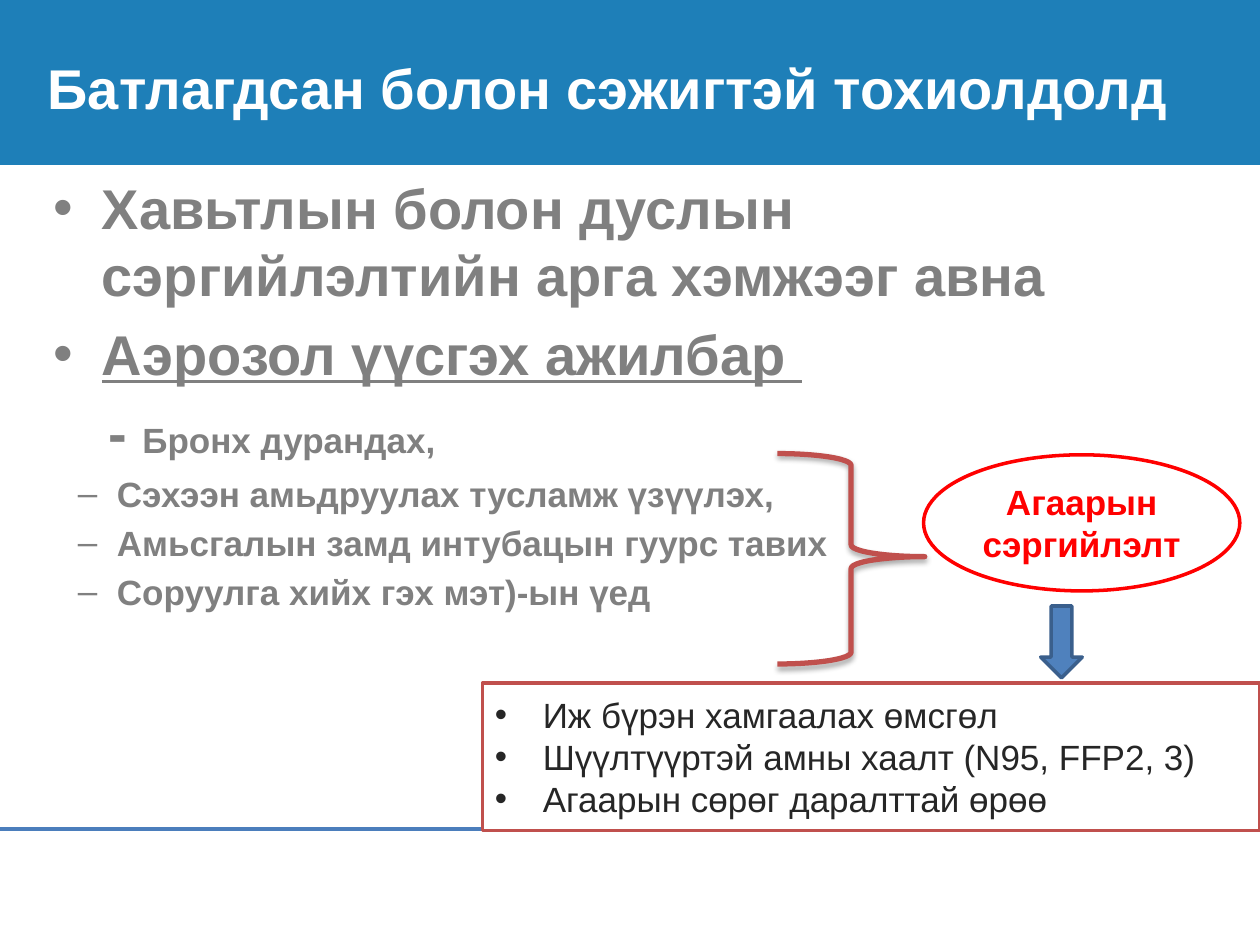
from lxml.etree import SubElement
from pptx import Presentation
from pptx.dml.color import RGBColor
from pptx.enum.shapes import MSO_CONNECTOR as Line, MSO_SHAPE as Shape
from pptx.enum.text import MSO_ANCHOR as Anchor, PP_ALIGN as Align
from pptx.oxml.ns import qn
from pptx.util import Inches, Pt

COLORS = {
    "header": "1E7FB8", "white": "FFFFFF", "body": "808080", "rule": "4B7EBC",
    "brace": "C0504D", "alert": "FF0000", "dark": "262626",
    "arrow": "4F81BD", "arrow_edge": "3A5F8C", "shadow": "000000",
}

TITLE = "Батлагдсан болон сэжигтэй тохиолдолд"
MEASURES = [
    ("Хавьтлын болон дуслын сэргийлэлтийн арга хэмжээг авна", False),
    ("Аэрозол үүсгэх ажилбар ", True),
]
FIRST_PROCEDURE = ("- ", "Бронх дурандах,")
PROCEDURES = [
    "Сэхээн амьдруулах тусламж үзүүлэх,",
    "Амьсгалын замд интубацын гуурс тавих",
    "Соруулга хийх гэх мэт)-ын үед",
]
PRECAUTION = "Агаарын сэргийлэлт"
EQUIPMENT = [
    "Иж бүрэн хамгаалах өмсгөл",
    "Шүүлтүүртэй амны хаалт (N95, FFP2, 3)",
    "Агаарын сөрөг даралттай өрөө",
]

AREAS = {
    "header": (0, 0, 100, 17.47),
    "title": (2.8, 0, 97.2, 18.53),
    "body": (3.3, 17.73, 95, 64.4),
    "brace": (61.7, 48, 11.7, 22.27),
    "precaution": (73.3, 48.13, 25.1, 14.4),
    "equipment": (38.3, 72.27, 61.7, 15.6),
    "arrow": (82.6, 64.13, 3.3, 7.6),
}
RULE_Y = 87.73

prs = Presentation()
prs.slide_width, prs.slide_height = Inches(10), Inches(7.5)
slide = prs.slides.add_slide(prs.slide_layouts[6])


def across(share):
    return round(prs.slide_width * share / 100)


def down(share):
    return round(prs.slide_height * share / 100)


def place(name):
    x, y, w, h = AREAS[name]
    return across(x), down(y), across(w), down(h)


def rgb(name):
    return RGBColor.from_string(COLORS[name])


def add_shape(kind, name, fill=None, line=None, width=2):
    sp = slide.shapes.add_shape(kind, *place(name))
    sp.shadow.inherit = False
    if fill:
        sp.fill.solid()
        sp.fill.fore_color.rgb = rgb(fill)
    else:
        sp.fill.background()
    if line:
        sp.line.color.rgb = rgb(line)
        sp.line.width = Pt(width)
    else:
        sp.line.fill.background()
    return sp


def add_box(name):
    sp = slide.shapes.add_textbox(*place(name))
    sp.text_frame.word_wrap = True
    return sp


def add_text(sp, *runs, size=20, color="body", bold=True, underline=False,
             align=Align.LEFT, bullet=None, left=0, hang=0, before=0):
    tf = sp.text_frame
    p = tf.paragraphs[0] if not tf.text else tf.add_paragraph()
    p.alignment = align
    p.space_before = Pt(before)
    pPr = p._p.get_or_add_pPr()
    pPr.set("marL", str(Inches(left)))
    pPr.set("indent", str(-Inches(hang)))
    if bullet:
        SubElement(pPr, qn("a:buFont"), typeface="Arial")
        SubElement(pPr, qn("a:buChar"), char=bullet)
    for text, run_size in runs:
        r = p.add_run()
        r.text = text
        r.font.name = "Arial"
        r.font.size = Pt(run_size or size)
        r.font.bold = bold
        r.font.underline = underline
        r.font.color.rgb = rgb(color)


add_shape(Shape.RECTANGLE, "header", fill="header")

rule = slide.shapes.add_connector(
    Line.STRAIGHT, 0, down(RULE_Y), across(100), down(RULE_Y))
rule.line.color.rgb = rgb("rule")
rule.line.width = Pt(2)
SubElement(rule._element.spPr, qn("a:effectLst"))

body = add_box("body")
for i, (text, underline) in enumerate(MEASURES):
    add_text(body, (text, None), size=32, underline=underline, bullet="•",
             left=0.38, hang=0.38, before=6.4 if i else 0)
dash, text = FIRST_PROCEDURE
add_text(body, (dash, 32), (text, 20), align=Align.JUSTIFY, left=0.43, before=6.4)
for text in PROCEDURES:
    add_text(body, (text, None), align=Align.JUSTIFY, bullet="–",
             left=0.5, hang=0.31, before=4)

title = add_box("title")
title.text_frame.vertical_anchor = Anchor.MIDDLE
add_text(title, (TITLE, None), size=32, color="white")

brace = add_shape(Shape.RIGHT_BRACE, "brace", line="brace", width=3)
brace.adjustments[0], brace.adjustments[1] = 0.08, 0.49
effects = brace._element.spPr.find(qn("a:effectLst"))
shadow = SubElement(effects, qn("a:outerShdw"), blurRad=str(Pt(3.1)),
                    dist=str(Pt(1.8)), dir="5400000", rotWithShape="0")
shade = SubElement(shadow, qn("a:srgbClr"), val=COLORS["shadow"])
SubElement(shade, qn("a:alpha"), val="35000")

precaution = add_shape(Shape.OVAL, "precaution", fill="white", line="alert")
precaution.text_frame.vertical_anchor = Anchor.MIDDLE
add_text(precaution, (PRECAUTION, None), color="alert", align=Align.CENTER)

equipment = add_shape(Shape.RECTANGLE, "equipment", fill="white", line="brace")
equipment.text_frame.vertical_anchor = Anchor.MIDDLE
for text in EQUIPMENT:
    add_text(equipment, (text, None), color="dark", bold=False, bullet="•",
             left=0.38, hang=0.38)

add_shape(Shape.DOWN_ARROW, "arrow", fill="arrow", line="arrow_edge")

prs.save("out.pptx")
